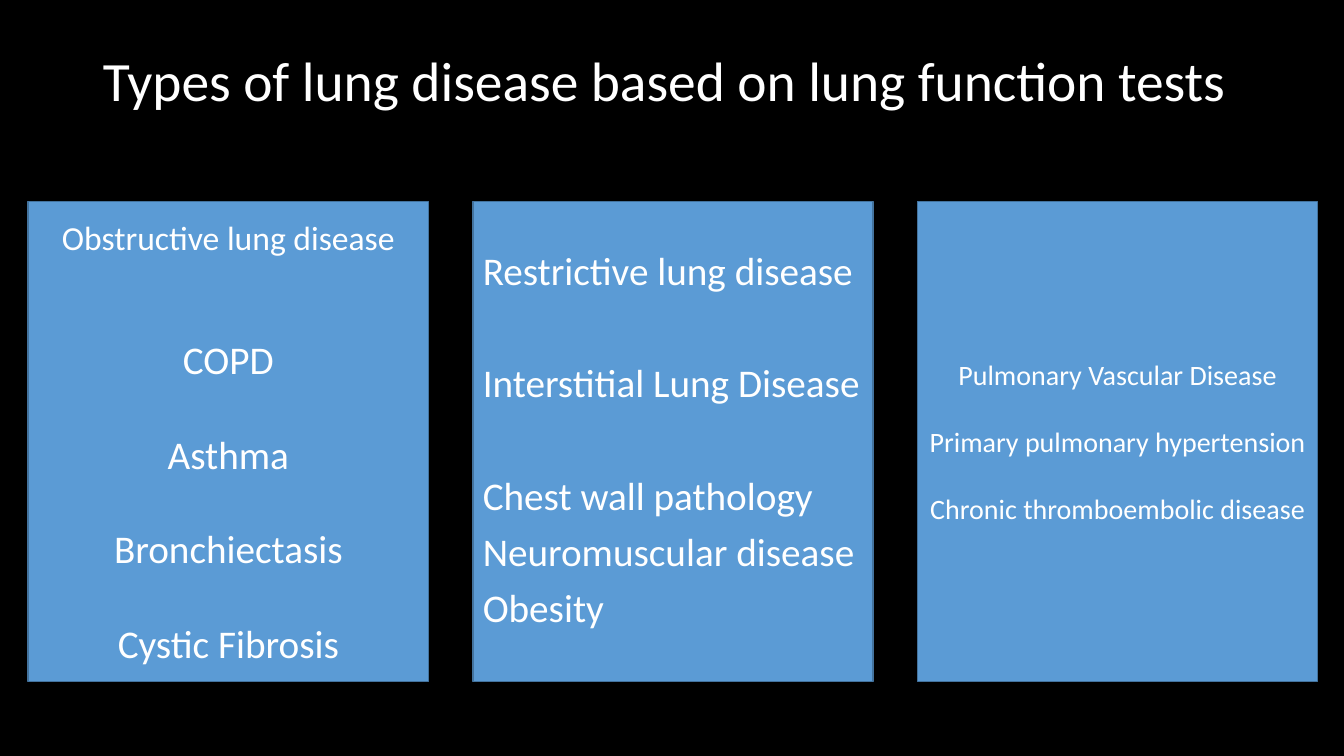
from dataclasses import dataclass

from pptx import Presentation
from pptx import util as u
from pptx.dml import color
from pptx.enum import shapes, text

SCALE = 9144  # EMU per px, 100 px to the inch


@dataclass(frozen=True)
class Theme:
    back: str = "000000"
    ink: str = "FFFFFF"
    card: str = "5B9BD5"
    edge: str = "43739E"
    font: str = "Calibri"
    title: float = 39.6
    head: int = 24
    large: int = 28
    small: int = 20


@dataclass(frozen=True)
class Line:
    words: str
    size: float
    gap: int = 0  # points above the line


@dataclass(frozen=True)
class Card:
    lines: list[Line]
    align: text.PP_ALIGN = text.PP_ALIGN.CENTER
    lead: float = 1.0


THEME = Theme()
LEFT, TOP, WIDTH, HEIGHT, PITCH = 28, 200, 397, 476, 441
CARDS = [
    Card([
        Line("Obstructive lung disease", THEME.head),
        Line("COPD", THEME.large, 56),
        Line("Asthma", THEME.large, 34),
        Line("Bronchiectasis", THEME.large, 34),
        Line("Cystic Fibrosis", THEME.large, 34),
    ]),
    Card([
        Line("Restrictive lung disease", THEME.large, 10),
        Line("Interstitial Lung Disease", THEME.large, 50),
        Line("Chest wall pathology", THEME.large, 50),
        Line("Neuromuscular disease", THEME.large, 10),
        Line("Obesity", THEME.large, 10),
    ], text.PP_ALIGN.LEFT, 0.9),
    Card([
        Line("Pulmonary Vascular Disease", THEME.small),
        Line("Primary pulmonary hypertension", THEME.small, 24),
        Line("Chronic thromboembolic disease", THEME.small, 24),
    ]),
]


def px(count: int) -> u.Emu:
    return u.Emu(count * SCALE)


def rgb(code: str) -> color.RGBColor:
    return color.RGBColor.from_string(code)


def write(frame, card: Card) -> None:
    """Fill a text frame with the lines of a card, centred in height."""
    frame.text = "\n".join(line.words for line in card.lines)
    frame.word_wrap = True
    frame.auto_size = text.MSO_AUTO_SIZE.NONE
    frame.vertical_anchor = text.MSO_ANCHOR.MIDDLE
    for para, line in zip(frame.paragraphs, card.lines):
        para.alignment = card.align
        para.line_spacing = card.lead
        para.space_before = u.Pt(line.gap)
        for run in para.runs:
            run.font.name = THEME.font
            run.font.size = u.Pt(line.size)
            run.font.color.rgb = rgb(THEME.ink)


def add_title(slide) -> None:
    title = slide.shapes.title
    title.left, title.top = px(92), px(40)
    title.width, title.height = px(1150), px(145)
    line = Line("Types of lung disease based on lung function tests", THEME.title)
    write(title.text_frame, Card([line], text.PP_ALIGN.LEFT, 0.9))
    title.text_frame.margin_bottom = px(65)  # lifts the title above the middle


def add_card(slide, card: Card, left: int) -> None:
    box = slide.shapes.add_shape(
        shapes.MSO_SHAPE.RECTANGLE, px(left), px(TOP), px(WIDTH), px(HEIGHT))
    box.shadow.inherit = False
    box.fill.solid()
    box.fill.fore_color.rgb = rgb(THEME.card)
    box.line.color.rgb = rgb(THEME.edge)
    box.line.width = u.Pt(1)
    write(box.text_frame, card)


def main() -> None:
    deck = Presentation()
    deck.slide_width, deck.slide_height = px(1333), px(750)
    slide = deck.slides.add_slide(deck.slide_layouts.get_by_name("Title Only"))
    slide.background.fill.solid()
    slide.background.fill.fore_color.rgb = rgb(THEME.back)
    add_title(slide)
    for index, card in enumerate(CARDS):
        add_card(slide, card, LEFT + index * PITCH)
    deck.save("out.pptx")


if __name__ == "__main__":
    main()
